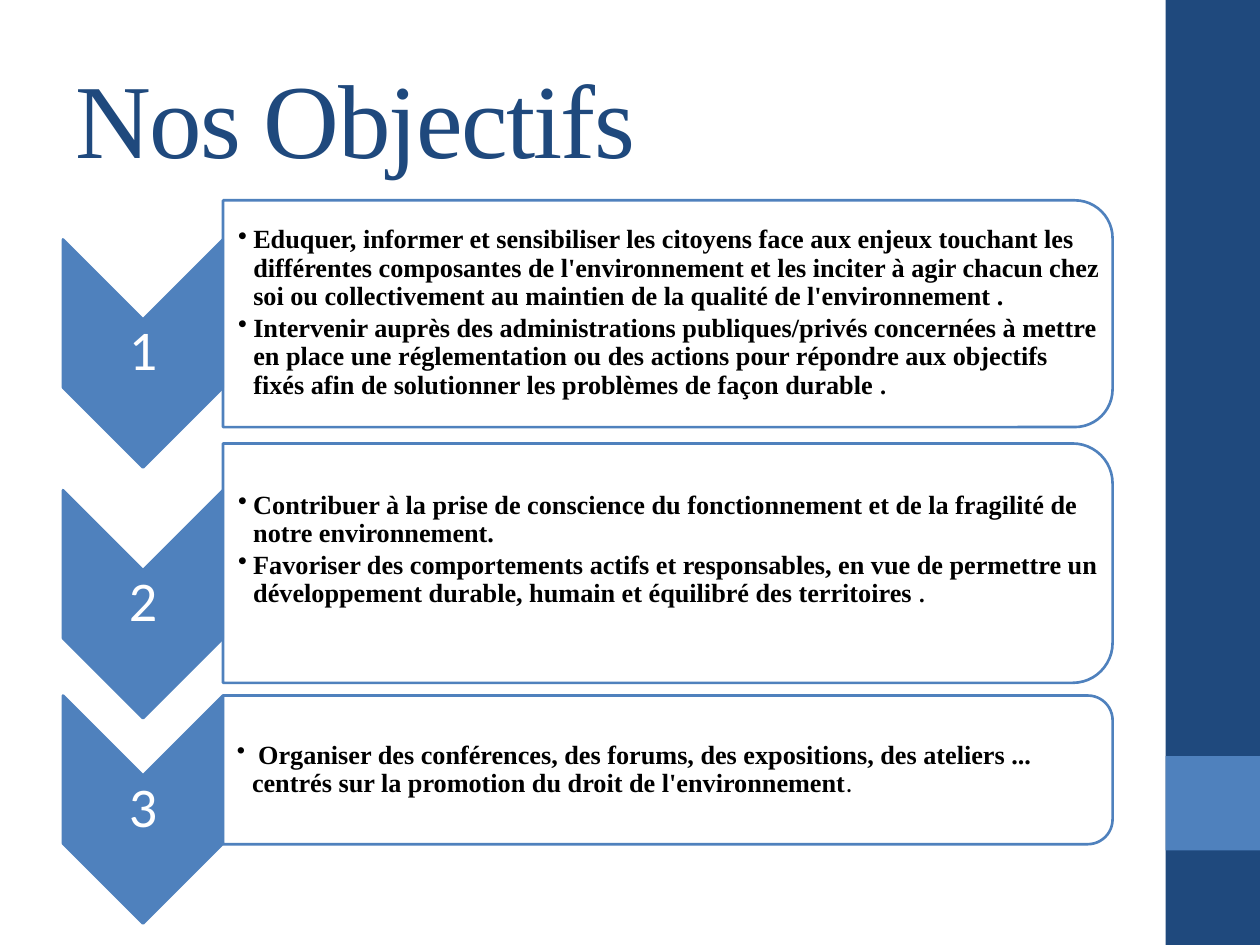
"""Build the "Nos Objectifs" slide: three numbered chevrons with their goals."""
from lxml import etree
from pptx import Presentation
from pptx.dml.color import RGBColor
from pptx.enum.shapes import MSO_SHAPE
from pptx.enum.text import MSO_ANCHOR, MSO_AUTO_SIZE, PP_ALIGN
from pptx.oxml.ns import qn
from pptx.util import Inches, Pt

NAVY, BLUE, WHITE, BLACK = "1F497D", "4F81BD", "FFFFFF", "000000"
SERIF, SANS = "Times New Roman", "Calibri"


def add_shape(kind, x, y, w, h, fill, line=None, rotation=0):
    sp = s.shapes.add_shape(kind, Inches(x), Inches(y), Inches(w), Inches(h))
    sp.shadow.inherit = False
    sp.rotation = rotation
    sp.fill.solid()
    sp.fill.fore_color.rgb = RGBColor.from_string(fill)
    if line:
        sp.line.color.rgb = RGBColor.from_string(line)
        sp.line.width = Pt(1.5)
    else:
        sp.line.fill.background()
    return sp


def add_run(p, text, size, name, color, bold=False):
    r = p.add_run()
    r.text = text
    for key, value in {"size": Pt(size), "name": name, "bold": bold}.items():
        setattr(r.font, key, value)
    r.font.color.rgb = RGBColor.from_string(color)
    return r


prs = Presentation()
prs.slide_width, prs.slide_height = Inches(10), Inches(7.5)
s = prs.slides.add_slide(prs.slide_layouts[5])

add_shape(MSO_SHAPE.RECTANGLE, 9.25, 0, 0.75, 7.5, NAVY)
add_shape(MSO_SHAPE.RECTANGLE, 9.25, 6, 0.75, 0.75, BLUE)

title = s.shapes.title
for key, value in {"left": 0.5, "top": 0.3, "width": 8.33, "height": 1.25}.items():
    setattr(title, key, Inches(value))
tf = title.text_frame
tf.auto_size = MSO_AUTO_SIZE.NONE
tf.vertical_anchor = MSO_ANCHOR.MIDDLE
p = tf.paragraphs[0]
p.alignment = PP_ALIGN.LEFT
r = add_run(p, "Nos Objectifs", 60, SERIF, NAVY)
r.font._element.set("spc", "-100")

goals = [
    {"chevron": 2.17, "middle": 2.49, "height": 1.8, "text": (1.67, 6.98, 1.63),
     "left": 0.12, "bottom": 0.01, "items": [
         [("Eduquer, informer et sensibiliser les citoyens face aux enjeux touchant les "
           "différentes composantes de l'environnement et les inciter à agir chacun chez "
           "soi ou collectivement au maintien de la qualité de l'environnement .",
           15, SERIF, BLACK, True)],
         [("Intervenir auprès des administrations publiques/privés concernées à mettre "
           "en place une réglementation ou des actions pour répondre aux objectifs "
           "fixés afin de solutionner les problèmes de façon durable ",
           15, SERIF, BLACK, True),
          (".", 14, SERIF, BLACK, True)]]},
    {"chevron": 4.16, "middle": 4.47, "height": 1.9, "text": (3.62, 6.97, 1.71),
     "left": 0.12, "bottom": 0.23, "items": [
         [("Contribuer à la prise de conscience du fonctionnement et de la fragilité de "
           "notre environnement.", 15, SERIF, BLACK, True)],
         [("Favoriser des comportements actifs et responsables, en vue de permettre un "
           "développement durable, humain et équilibré des territoires ",
           15, SERIF, BLACK, True),
          (".", 13, SERIF, BLACK, True)]]},
    {"chevron": 5.79, "middle": 6.11, "height": 1.18, "text": (5.58, 7.01, 1.06),
     "left": 0.11, "bottom": 0.01, "items": [
         [(" ", 14, SERIF, BLACK, True),
          ("Organiser des conférences, des forums, des expositions, des ateliers ... "
           "centrés sur la promotion du droit de l'environnement",
           15, SERIF, BLACK, True),
          (".", 15, SANS, BLACK)]]},
]

for number, goal in enumerate(goals, 1):
    add_shape(MSO_SHAPE.CHEVRON, 0.23, goal["chevron"], 1.81, 1.27, BLUE, BLUE, 90)
    label = s.shapes.add_textbox(Inches(0.5), Inches(goal["chevron"] + 0.36),
                                 Inches(1.27), Inches(0.54))
    tf = label.text_frame
    tf.word_wrap = True
    tf.vertical_anchor = MSO_ANCHOR.MIDDLE
    for side in ("left", "top", "right", "bottom"):
        setattr(tf, f"margin_{side}", Inches(0.02))
    p = tf.paragraphs[0]
    p.alignment = PP_ALIGN.CENTER
    p.line_spacing = 0.9
    add_run(p, str(number), 32, SANS, WHITE)

    panel = add_shape(MSO_SHAPE.ROUND_2_SAME_RECTANGLE, 5.3 - goal["height"] / 2,
                      goal["middle"] - 3.53, goal["height"], 7.06, WHITE, BLUE, 90)
    color = panel._element.spPr.find(qn("a:solidFill")).find(qn("a:srgbClr"))
    etree.SubElement(color, qn("a:alpha")).set("val", "90000")

    top, width, height = goal["text"]
    body = s.shapes.add_textbox(Inches(1.77), Inches(top), Inches(width), Inches(height))
    tf = body.text_frame
    tf.word_wrap = True
    tf.vertical_anchor = MSO_ANCHOR.MIDDLE
    margins = {"left": goal["left"], "top": 0.01, "right": 0.01, "bottom": goal["bottom"]}
    for side, value in margins.items():
        setattr(tf, f"margin_{side}", Inches(value))
    for i, item in enumerate(goal["items"]):
        p = tf.add_paragraph() if i else tf.paragraphs[0]
        for key, value in {"level": 1, "line_spacing": 0.9, "space_after": Pt(2)}.items():
            setattr(p, key, value)
        pPr = p._p.get_or_add_pPr()
        pPr.set("marL", str(Inches(0.12)))
        pPr.set("indent", str(Inches(-0.12)))
        etree.SubElement(pPr, qn("a:buChar")).set("char", "•")
        for run in item:
            add_run(p, *run)

prs.save("out.pptx")
